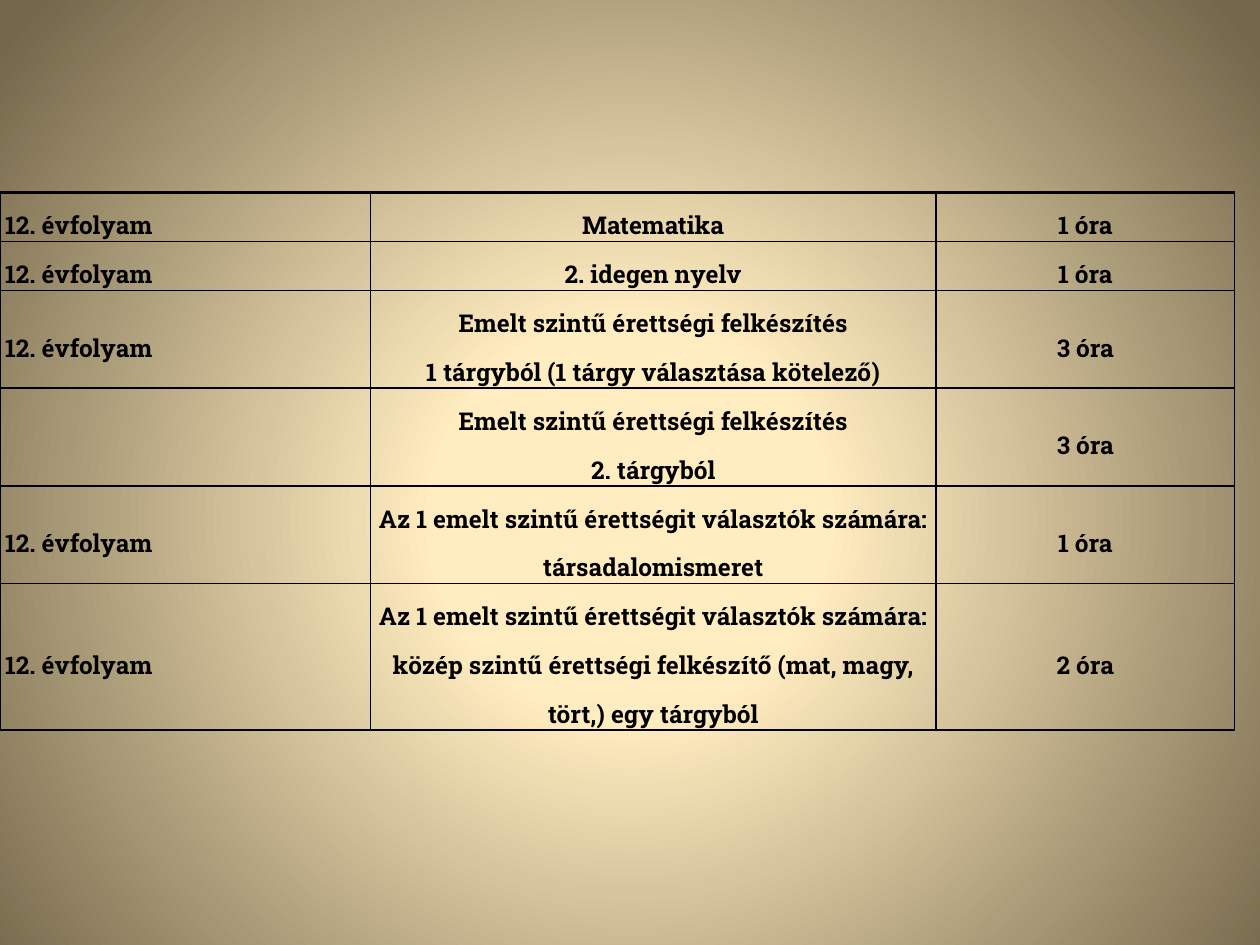
"""Builds a slide listing the elective lessons of the twelfth grade."""
import dataclasses

import pptx
import pptx.dml.color
import pptx.enum.text
import pptx.oxml
import pptx.oxml.ns
import pptx.util

Inches = pptx.util.Inches
Pt = pptx.util.Pt
ALIGN = pptx.enum.text.PP_ALIGN


@dataclasses.dataclass(frozen=True)
class Theme:
    """Colours, typeface and sizes of the slide."""
    ink: str = "000000"
    glow: tuple = ((0, "FFECC2"), (25, "FFECC0"), (100, "74674A"))
    typeface: str = "Roboto Slab"
    text_size: int = 14
    line_spacing: float = 1.5
    rule: float = 1
    top_rule: float = 2.25


class LessonSlide:
    """Holds the theme and the current slide."""

    def __init__(self, deck, theme):
        """Adds a blank slide to the deck."""
        self.theme = theme
        self.slide = deck.slides.add_slide(deck.slide_layouts[6])

    def background(self):
        """Fills the background with a circular glow."""
        self.slide.background.fill.gradient()
        gradient = self.slide.element.xpath(".//p:bg//a:gradFill")[0]
        stops = "".join(
            f'<a:gs pos="{percent * 1000}"><a:srgbClr val="{colour}"/></a:gs>'
            for percent, colour in self.theme.glow)
        glow = pptx.oxml.parse_xml(
            f'<a:gradFill {pptx.oxml.ns.nsdecls("a")} rotWithShape="1">'
            f'<a:gsLst>{stops}</a:gsLst><a:path path="circle">'
            '<a:fillToRect l="10000" t="110000" r="10000" b="100000"/>'
            '</a:path></a:gradFill>')
        gradient.getparent().replace(gradient, glow)

    def borders(self, cell, top_width):
        """Rules all four sides of a cell."""
        properties = cell._tc.get_or_add_tcPr()
        for side in "LRTB":
            width = top_width if side == "T" else self.theme.rule
            properties.append(pptx.oxml.parse_xml(
                f'<a:ln{side} {pptx.oxml.ns.nsdecls("a")} w="{Pt(width)}">'
                f'<a:solidFill><a:srgbClr val="{self.theme.ink}"/></a:solidFill>'
                f'</a:ln{side}>'))

    def cell(self, cell, text, alignment, top_width):
        """Writes and styles one cell."""
        self.borders(cell, top_width)
        cell.fill.background()
        cell.margin_left = cell.margin_right = Inches(0.04)
        cell.margin_top = cell.margin_bottom = 0
        cell.vertical_anchor = pptx.enum.text.MSO_ANCHOR.MIDDLE
        cell.text = text
        for paragraph in cell.text_frame.paragraphs:
            paragraph.alignment = alignment
            paragraph.line_spacing = self.theme.line_spacing
            font = paragraph.font
            font.name = self.theme.typeface
            font.size = Pt(self.theme.text_size)
            font.bold = True
            font.color.rgb = pptx.dml.color.RGBColor.from_string(self.theme.ink)

    def table(self, left, top, widths, line_height, lessons):
        """Adds the lesson table, each row as tall as its lines of text."""
        heights = [line_height * lines for lines, *_ in lessons]
        table = self.slide.shapes.add_table(
            len(lessons), len(widths), Inches(left), Inches(top),
            Inches(sum(widths)), Inches(sum(heights))).table
        table.first_row = table.horz_banding = False
        for column, width in zip(table.columns, widths):
            column.width = Inches(width)
        alignments = (ALIGN.JUSTIFY, ALIGN.CENTER, ALIGN.CENTER)
        for index, (_, *texts) in enumerate(lessons):
            table.rows[index].height = Inches(heights[index])
            top_width = self.theme.rule if index else self.theme.top_rule
            for cell, text, alignment in zip(table.rows[index].cells, texts, alignments):
                self.cell(cell, text, alignment, top_width)


def main():
    """Builds and saves the deck."""
    deck = pptx.Presentation()
    deck.slide_width, deck.slide_height = Inches(10), Inches(7.5)
    grade = "12. évfolyam"
    advanced = "Emelt szintű érettségi felkészítés"
    single = "Az 1 emelt szintű érettségit választók számára:"
    lessons = (
        (1, grade, "Matematika", "1 óra"),
        (1, grade, "2. idegen nyelv", "1 óra"),
        (2, grade, f"{advanced}\n1 tárgyból (1 tárgy választása kötelező)", "3 óra"),
        (2, "", f"{advanced}\n2. tárgyból", "3 óra"),
        (2, grade, f"{single} társadalomismeret", "1 óra"),
        (3, grade, f"{single} közép szintű érettségi felkészítő "
                   "(mat, magy, tört,) egy tárgyból", "2 óra"),
    )
    page = LessonSlide(deck, Theme())
    page.background()
    page.table(0, 1.53, (2.94, 4.49, 2.37), 0.38, lessons)
    deck.save("out.pptx")


if __name__ == "__main__":
    main()
